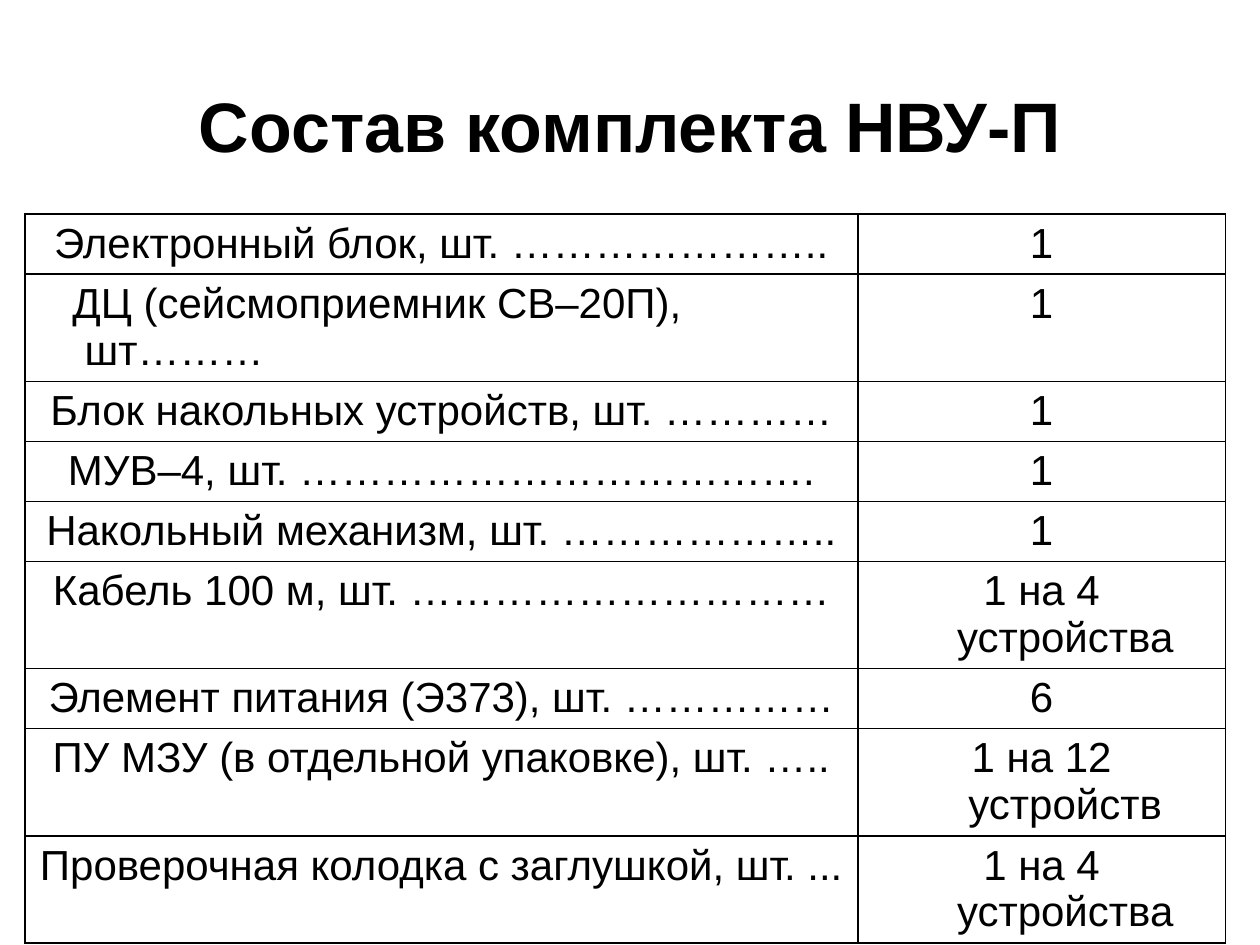
from dataclasses import dataclass

import pptx
import pptx.dml.color
import pptx.enum.text
import pptx.oxml
import pptx.oxml.ns
import pptx.util

Pt = pptx.util.Pt
ALIGN = pptx.enum.text.PP_ALIGN
BLACK = pptx.dml.color.RGBColor(0x00, 0x00, 0x00)
FONT = "Arial"
HANGING = 27
COLUMN_WIDTHS = (476, 210)
ONE_LINE, TWO_LINES = 34.3, 60.9


@dataclass(frozen=True)
class KitItem:
    name: str
    quantity: str
    height: float = ONE_LINE
    align: ALIGN = ALIGN.CENTER
    first_indent: float = -HANGING


ITEMS = (
    KitItem("Электронный блок, шт. …………………..", "1"),
    KitItem("ДЦ (сейсмоприемник СВ–20П), шт………", "1", TWO_LINES, ALIGN.LEFT, -7),
    KitItem("Блок накольных устройств, шт. …………", "1"),
    KitItem("МУВ–4, шт. ……………………………….", "1"),
    KitItem("Накольный механизм, шт. ………………..", "1"),
    KitItem("Кабель 100 м, шт. …………………………", "1 на 4 устройства", TWO_LINES),
    KitItem("Элемент питания (Э373), шт. ……………", "6"),
    KitItem("ПУ МЗУ (в отдельной упаковке), шт. …..", "1 на 12 устройств", TWO_LINES),
    KitItem("Проверочная колодка с заглушкой, шт. ...", "1 на 4 устройства", TWO_LINES),
)


def write(tf, text: str, *, size: float, bold: bool = False,
          align: ALIGN = ALIGN.CENTER, margin: float = 0, indent: float = 0) -> None:
    """Fill a text frame with one formatted paragraph."""
    tf.word_wrap = True
    p = tf.paragraphs[0]
    p.alignment = align
    pPr = p._p.get_or_add_pPr()
    pPr.set("marL", str(Pt(margin)))
    pPr.set("indent", str(Pt(indent)))
    r = p.add_run()
    r.text = text
    r.font.name = FONT
    r.font.size = Pt(size)
    r.font.bold = bold
    r.font.color.rgb = BLACK


def style_cell(cell, width: float = 1) -> None:
    """Clear the fill of a cell, free its bottom margin and draw its borders."""
    cell.fill.background()
    cell.margin_bottom = Pt(0)
    tcPr = cell._tc.get_or_add_tcPr()
    for i, side in enumerate(("lnL", "lnR", "lnT", "lnB")):
        tcPr.insert(i, pptx.oxml.parse_xml(
            f'<a:{side} {pptx.oxml.ns.nsdecls("a")} w="{Pt(width)}"><a:solidFill>'
            f'<a:srgbClr val="{BLACK}"/></a:solidFill></a:{side}>'))


def add_title(s, text: str) -> None:
    """Add the centred slide heading."""
    tf = s.shapes.add_textbox(Pt(54), Pt(26), Pt(612), Pt(90)).text_frame
    tf.vertical_anchor = pptx.enum.text.MSO_ANCHOR.MIDDLE
    write(tf, text, size=40, bold=True)


def add_kit_table(s, items: tuple[KitItem, ...]) -> None:
    """Add the table of kit items and quantities."""
    table = s.shapes.add_table(
        len(items), len(COLUMN_WIDTHS), Pt(14.2), Pt(122.4),
        Pt(sum(COLUMN_WIDTHS)), Pt(sum(item.height for item in items))).table
    table.first_row = table.horz_banding = False
    for column, width in zip(table.columns, COLUMN_WIDTHS):
        column.width = Pt(width)
    for row, item in zip(table.rows, items):
        row.height = Pt(item.height)
        name, quantity = row.cells
        write(name.text_frame, item.name, size=24, align=item.align,
              margin=HANGING, indent=item.first_indent)
        write(quantity.text_frame, item.quantity, size=24,
              margin=HANGING, indent=-HANGING)
        style_cell(name)
        style_cell(quantity)


def main() -> None:
    """Build and save the slide."""
    prs = pptx.Presentation()
    prs.slide_width, prs.slide_height = Pt(720), Pt(540)
    s = prs.slides.add_slide(prs.slide_layouts[6])
    add_title(s, "Состав комплекта НВУ-П")
    add_kit_table(s, ITEMS)
    prs.save("out.pptx")


if __name__ == "__main__":
    main()
